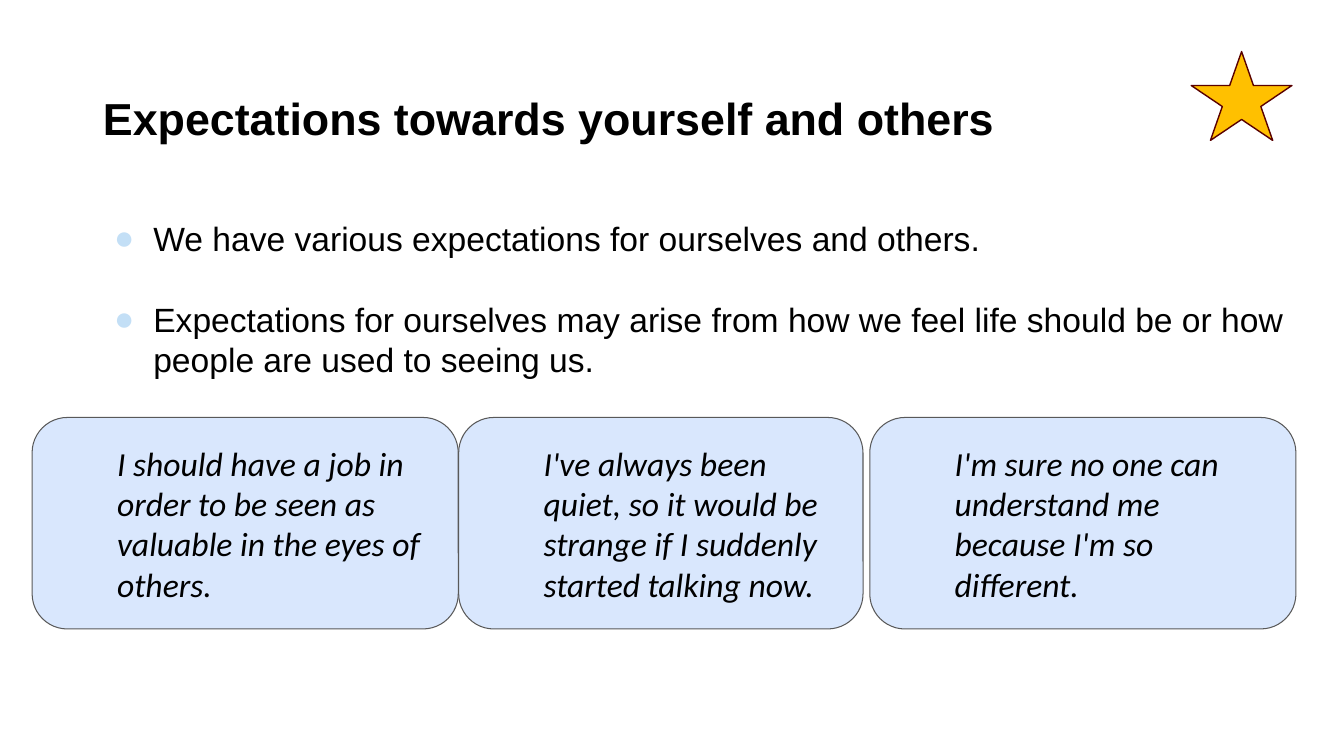
from dataclasses import dataclass

from lxml import etree
from pptx import Presentation
from pptx import util as u
from pptx.dml.color import RGBColor
from pptx.enum import shapes, text
from pptx.oxml.ns import qn


@dataclass(frozen=True)
class Theme:
    ink: str = "000000"
    bullet: str = "C3DFF6"
    card_fill: str = "D9E7FD"
    card_line: str = "595959"
    star_fill: str = "FFC000"
    star_line: str = "590000"
    font: str = "Arial"
    quote_font: str = "Calibri"
    title_size: float = 32
    text_size: float = 24
    line_height: float = 28.8


@dataclass(frozen=True)
class Box:
    left: float
    top: float
    width: float
    height: float

    def lengths(self) -> list[u.Cm]:
        return [u.Cm(value) for value in (self.left, self.top, self.width, self.height)]


@dataclass(frozen=True)
class Quote:
    left: float
    width: float
    words: str


THEME = Theme()
TITLE_BOX = Box(2.34, 1.88, 29.21, 2.16)
BODY_BOX = Box(2.34, 5.36, 30.71, 11.02)
STAR_BOX = Box(30.02, 1.3, 2.54, 2.24)
QUOTE_TOP, QUOTE_HEIGHT = 10.52, 5.33

TITLE = "Expectations towards yourself and others"
POINTS = [
    "We have various expectations for ourselves and others.",
    "Expectations for ourselves may arise from how we feel life should be "
    "or how people are used to seeing us.",
]
QUOTES = [
    Quote(0.81, 10.74, "I should have a job in order to be seen as valuable in the eyes of others."),
    Quote(11.56, 10.19, "I've always been quiet, so it would be strange if I suddenly started talking now."),
    Quote(21.92, 10.74, "I'm sure no one can understand me because I'm so different."),
]


def place(shape, box: Box) -> None:
    shape.left, shape.top, shape.width, shape.height = box.lengths()


def style_font(font, name: str, size: float, bold: bool = False, italic: bool = False) -> None:
    font.name = name
    font.size = u.Pt(size)
    font.bold = bold
    font.italic = italic
    font.color.rgb = RGBColor.from_string(THEME.ink)


def indent(paragraph, left: float, first_line: float = 0):
    properties = paragraph._p.get_or_add_pPr()
    properties.set("marL", str(u.Cm(left)))
    properties.set("indent", str(u.Cm(first_line)))
    return properties


def add_bullet(properties) -> None:
    color = etree.SubElement(properties, qn("a:buClr"))
    etree.SubElement(color, qn("a:srgbClr"), val=THEME.bullet)
    etree.SubElement(properties, qn("a:buFont"), typeface=THEME.font)
    etree.SubElement(properties, qn("a:buChar"), char="●")


def fill_title(title) -> None:
    place(title, TITLE_BOX)
    frame = title.text_frame
    frame.text = TITLE
    frame.auto_size = text.MSO_AUTO_SIZE.NONE
    frame.vertical_anchor = text.MSO_ANCHOR.MIDDLE
    paragraph = frame.paragraphs[0]
    paragraph.alignment = text.PP_ALIGN.LEFT
    style_font(paragraph.runs[0].font, THEME.font, THEME.title_size, bold=True)


def fill_body(body) -> None:
    place(body, BODY_BOX)
    frame = body.text_frame
    frame.text = "\n".join(POINTS)
    frame.auto_size = text.MSO_AUTO_SIZE.NONE
    for number, paragraph in enumerate(frame.paragraphs):
        add_bullet(indent(paragraph, 1.27, -0.99))
        paragraph.line_spacing = u.Pt(THEME.line_height)
        paragraph.space_before = u.Pt(THEME.line_height if number else 0)
        style_font(paragraph.font, THEME.font, THEME.text_size)
        style_font(paragraph.runs[0].font, THEME.font, THEME.text_size)


def add_figure(slide, kind: shapes.MSO_SHAPE, box: Box, fill: str, line: str, line_width: float):
    """Add a preset shape with a flat fill and an outline."""
    shape = slide.shapes.add_shape(kind, *box.lengths())
    shape.shadow.inherit = False
    shape.fill.solid()
    shape.fill.fore_color.rgb = RGBColor.from_string(fill)
    shape.line.color.rgb = RGBColor.from_string(line)
    shape.line.width = u.Pt(line_width)
    return shape


def add_quote(slide, quote: Quote) -> None:
    box = Box(quote.left, QUOTE_TOP, quote.width, QUOTE_HEIGHT)
    card = add_figure(slide, shapes.MSO_SHAPE.ROUNDED_RECTANGLE, box,
                      THEME.card_fill, THEME.card_line, 0.75)
    frame = card.text_frame
    frame.text = quote.words
    frame.word_wrap = True
    frame.vertical_anchor = text.MSO_ANCHOR.MIDDLE
    frame.margin_left = frame.margin_right = u.Cm(0.33)
    frame.margin_top = frame.margin_bottom = u.Cm(0.33)
    paragraph = frame.paragraphs[0]
    paragraph.level = 1
    indent(paragraph, 1.55)
    paragraph.alignment = text.PP_ALIGN.LEFT
    paragraph.line_spacing = u.Pt(THEME.line_height)
    style_font(paragraph.runs[0].font, THEME.quote_font, THEME.text_size, italic=True)


def main() -> None:
    presentation = Presentation()
    presentation.slide_width = u.Cm(33.87)
    presentation.slide_height = u.Cm(19.05)
    slide = presentation.slides.add_slide(presentation.slide_layouts.get_by_name("Title and Content"))
    fill_title(slide.shapes.title)
    fill_body(slide.placeholders[1])
    for quote in QUOTES:
        add_quote(slide, quote)
    add_figure(slide, shapes.MSO_SHAPE.STAR_5_POINT, STAR_BOX, THEME.star_fill, THEME.star_line, 1)
    presentation.save("out.pptx")


if __name__ == "__main__":
    main()
